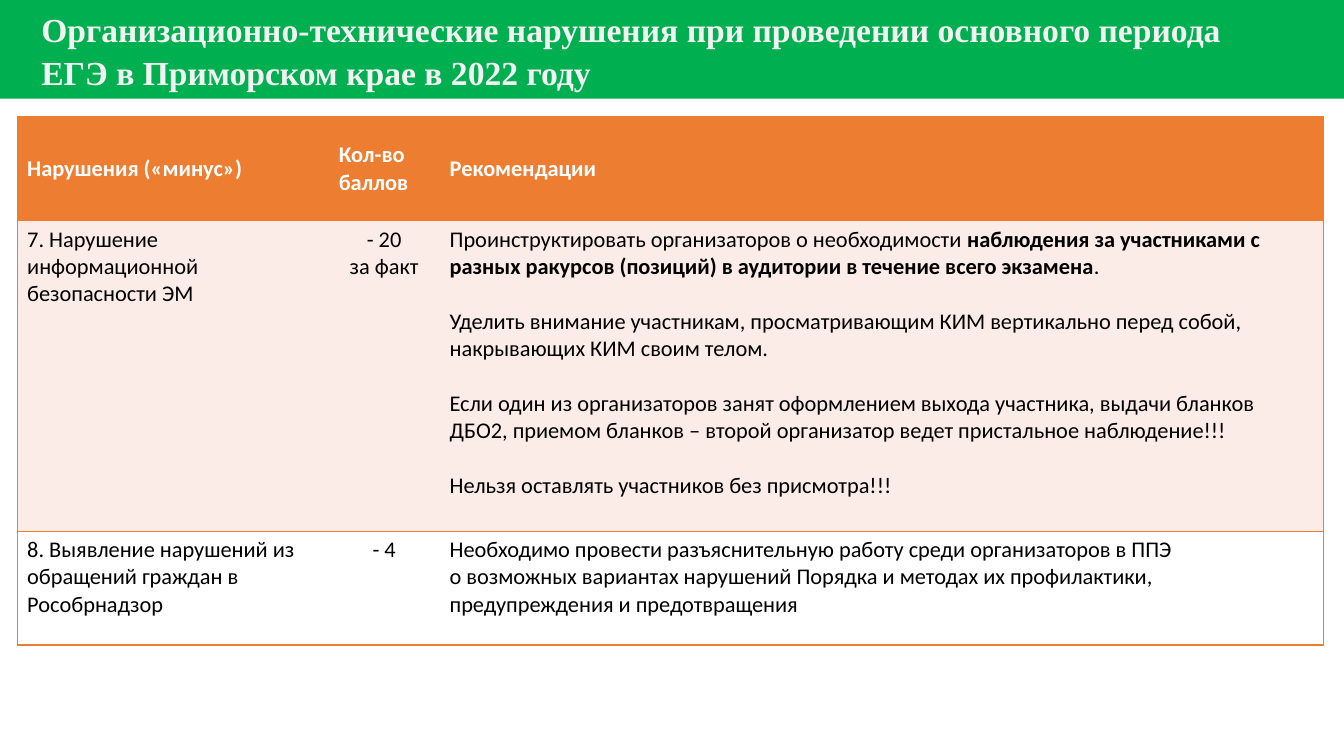
from dataclasses import dataclass

from lxml import etree
from pptx import Presentation
from pptx import util as u
from pptx.dml.color import RGBColor
from pptx.enum import text
from pptx.oxml import ns


@dataclass(frozen=True)
class Theme:
    band: str = "00AF50"
    title_ink: str = "F2F2F2"
    accent: str = "ED7D31"
    tint: str = "FCECE8"
    paper: str = "FFFFFF"
    ink: str = "000000"
    title_font: str = "Times New Roman"
    body_font: str = "Calibri"
    title_size: int = 24
    body_size: int = 16
    border: int = 1
    paragraph_gap: float = 19.5


def write(frame, content, *, font, size, color, bold=False,
          align=text.PP_ALIGN.LEFT, gap=0, line_spacing=None):
    """Fill a frame from one text or a list of paragraphs; **marks** toggle bold."""
    paragraphs = [content] if isinstance(content, str) else content
    for index, wording in enumerate(paragraphs):
        paragraph = frame.add_paragraph() if index else frame.paragraphs[0]
        paragraph.alignment = align
        paragraph.line_spacing = line_spacing
        paragraph.space_before = u.Pt(gap if index else 0)
        for part, stretch in enumerate(wording.split("**")):
            for row, line in enumerate(stretch.split("\n")):
                if row:
                    paragraph.add_line_break()
                run = paragraph.add_run()
                run.text = line
                run.font.name = font
                run.font.size = u.Pt(size)
                run.font.bold = bold or part % 2 == 1
                run.font.color.rgb = RGBColor.from_string(color)


class SlideBuilder:
    def __init__(self, deck, theme):
        self.theme = theme
        self.slide = deck.slides.add_slide(deck.slide_layouts[5])

    def title(self, wording, width, height):
        heading = self.slide.shapes.title
        heading.left, heading.top = u.Inches(0), u.Inches(0)
        heading.width, heading.height = u.Inches(width), u.Inches(height)
        heading.fill.solid()
        heading.fill.fore_color.rgb = RGBColor.from_string(self.theme.band)
        frame = heading.text_frame
        frame.word_wrap = True
        frame.auto_size = text.MSO_AUTO_SIZE.NONE
        frame.vertical_anchor = text.MSO_ANCHOR.MIDDLE
        frame.margin_left = u.Inches(0.41)
        frame.margin_right = frame.margin_top = frame.margin_bottom = 0
        write(frame, wording, font=self.theme.title_font, size=self.theme.title_size,
              color=self.theme.title_ink, bold=True, line_spacing=1.07)

    def table(self, records, left, top, widths, heights):
        table = self.slide.shapes.add_table(
            len(heights), len(widths), u.Inches(left), u.Inches(top),
            u.Inches(sum(widths)), u.Inches(sum(heights))).table
        table.first_row = table.horz_banding = False
        for column, width in zip(table.columns, widths):
            column.width = u.Inches(width)
        for row, height in zip(table.rows, heights):
            row.height = u.Inches(height)
        fills = (self.theme.accent, self.theme.tint, self.theme.paper)
        for r, record in enumerate(records):
            for c, content in enumerate(record):
                cell = table.cell(r, c)
                sides = "TB" + "L" * (c == 0) + "R" * (c == len(widths) - 1)
                self.cell(cell, content, fills[r], sides, header=r == 0,
                          centered=r > 0 and c == 1)

    def cell(self, cell, content, fill, sides, header, centered):
        cell.fill.solid()
        cell.fill.fore_color.rgb = RGBColor.from_string(fill)
        cell.vertical_anchor = text.MSO_ANCHOR.MIDDLE if header else text.MSO_ANCHOR.TOP
        self.borders(cell, sides)
        write(cell.text_frame, content, font=self.theme.body_font,
              size=self.theme.body_size, bold=header, gap=self.theme.paragraph_gap,
              color=self.theme.paper if header else self.theme.ink,
              align=text.PP_ALIGN.CENTER if centered else text.PP_ALIGN.LEFT)

    def borders(self, cell, sides):
        """Draw the named sides and clear the others."""
        properties = cell._tc.get_or_add_tcPr()
        for position, side in enumerate("LRTB"):
            line = etree.Element(ns.qn(f"a:ln{side}"), w=str(u.Pt(self.theme.border)))
            properties.insert(position, line)
            if side in sides:
                fill = etree.SubElement(line, ns.qn("a:solidFill"))
                etree.SubElement(fill, ns.qn("a:srgbClr"), val=self.theme.accent)
            else:
                etree.SubElement(line, ns.qn("a:noFill"))


TITLE = ("Организационно-технические нарушения при проведении основного периода\n"
         "ЕГЭ в Приморском крае в 2022 году")

VIOLATIONS = [
    ("Нарушения («минус»)", "Кол-во баллов", "Рекомендации"),
    ("7. Нарушение информационной безопасности ЭМ", "- 20\nза факт", [
        "Проинструктировать организаторов о необходимости **наблюдения за участниками "
        "с разных ракурсов (позиций) в аудитории в течение всего экзамена**.",
        "Уделить внимание участникам, просматривающим КИМ вертикально перед собой, "
        "накрывающих КИМ своим телом.",
        "Если один из организаторов занят оформлением выхода участника, выдачи бланков "
        "ДБО2, приемом бланков – второй организатор ведет пристальное наблюдение!!!",
        "Нельзя оставлять участников без присмотра!!!",
    ]),
    ("8. Выявление нарушений из обращений граждан в Рособрнадзор", "- 4",
     "Необходимо провести разъяснительную работу среди организаторов в ППЭ\n"
     "о возможных вариантах нарушений Порядка и методах их профилактики, "
     "предупреждения и предотвращения"),
]


def main():
    deck = Presentation()
    deck.slide_width, deck.slide_height = u.Inches(13.33), u.Inches(7.5)
    builder = SlideBuilder(deck, Theme())
    builder.title(TITLE, 13.33, 0.98)
    builder.table(VIOLATIONS, 0.17, 1.16, widths=(3.09, 1.1, 8.77),
                  heights=(1.03, 3.08, 1.13))
    deck.save("out.pptx")


if __name__ == "__main__":
    main()
